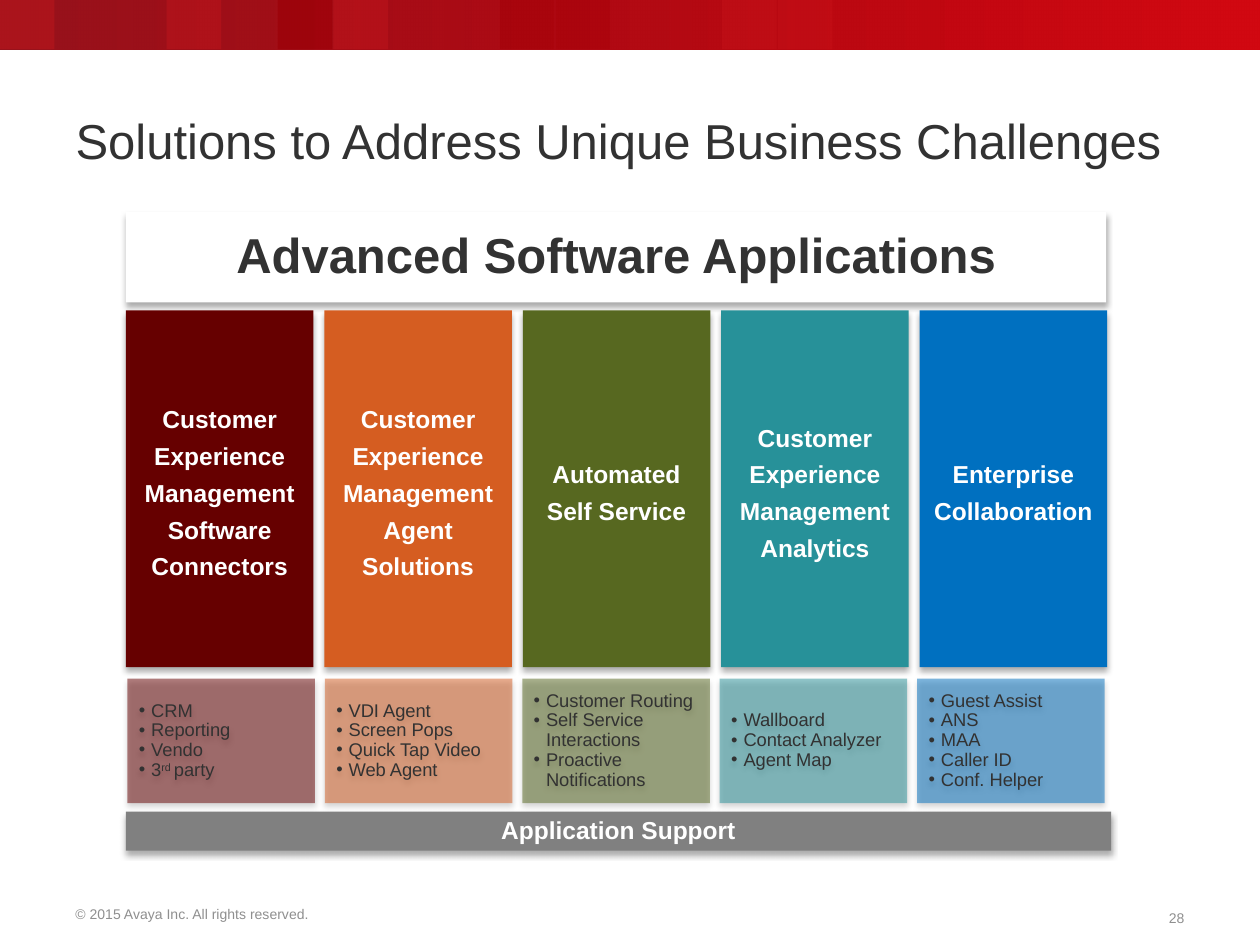
from lxml.etree import SubElement
from pptx import Presentation
from pptx.dml.color import RGBColor
from pptx.enum.shapes import MSO_SHAPE
from pptx.enum.text import MSO_ANCHOR, MSO_AUTO_SIZE, PP_ALIGN
from pptx.oxml.ns import qn
from pptx.util import Cm, Pt

FONT = "Arial"
WHITE = RGBColor(0xFF, 0xFF, 0xFF)
INK = RGBColor(0x32, 0x32, 0x32)
FOOTER_GRAY = RGBColor(0x8F, 0x8F, 0x8F)
SUPPORT_GRAY = RGBColor(0x80, 0x80, 0x80)
BANNER_START = RGBColor(0x91, 0x05, 0x0F)
BANNER_END = RGBColor(0xD1, 0x08, 0x11)
STRIP_DARK = RGBColor(0x99, 0x00, 0x00)
STRIP_LIGHT = RGBColor(0xFF, 0x47, 0x47)
MAROON = RGBColor(0x66, 0x00, 0x00)
ORANGE = RGBColor(0xD5, 0x5D, 0x21)
OLIVE = RGBColor(0x57, 0x68, 0x20)
TEAL = RGBColor(0x27, 0x91, 0x99)
BLUE = RGBColor(0x00, 0x70, 0xC0)

BANNER_HEIGHT = 0.99
STRIP_STEP = 1.12
STRIPS = {0: STRIP_LIGHT, 3: STRIP_LIGHT, 5: STRIP_DARK, 6: STRIP_LIGHT,
          9: STRIP_DARK, 10: STRIP_DARK, 13: STRIP_LIGHT, 14: STRIP_LIGHT}

LEFT = 2.54
CARD_WIDTH = 3.78
CARD_STEP = 4
LIST_LEFT = 2.57
LIST_STEP = 3.98

# (heading, colour, list right inset, list items); "^" encloses superscript
SOLUTIONS = [
    ("Customer Experience Management Software Connectors", MAROON, 0.25,
     ["CRM", "Reporting", "Vendo", "3^rd ^party"]),
    ("Customer Experience Management Agent Solutions", ORANGE, 0.25,
     ["VDI Agent", "Screen Pops", "Quick Tap Video", "Web Agent"]),
    ("Automated Self Service", OLIVE, 0,
     ["Customer Routing", "Self Service Interactions",
      "Proactive Notifications"]),
    ("Customer Experience Management Analytics", TEAL, 0.25,
     ["Wallboard", "Contact Analyzer", "Agent Map"]),
    ("Enterprise Collaboration", BLUE, 0.25,
     ["Guest Assist", "ANS", "MAA", "Caller ID", "Conf. Helper"]),
]


def format_paragraph(paragraph, size, color, bold=False,
                     align=PP_ALIGN.LEFT, spacing=0.9):
    paragraph.alignment = align
    paragraph.line_spacing = spacing
    font = paragraph.font
    font.name, font.size, font.bold = FONT, Pt(size), bold
    font.color.rgb = color


def set_opacity(shape, percent):
    for color in shape.fill._xPr.iter(qn("a:srgbClr")):
        SubElement(color, qn("a:alpha"), val=str(percent * 1000))


def add_block(slide, left, top, width, height, color=None):
    block = slide.shapes.add_shape(
        MSO_SHAPE.RECTANGLE, Cm(left), Cm(top), Cm(width), Cm(height))
    block.shadow.inherit = False
    block.line.fill.background()
    if color is not None:
        block.fill.solid()
        block.fill.fore_color.rgb = color
    return block


def add_shadow(block):
    effects = block._element.spPr.find(qn("a:effectLst"))
    shadow = SubElement(effects, qn("a:outerShdw"), blurRad=str(Pt(3.5)),
                        dist=str(Pt(2.2)), dir="5400000", rotWithShape="0")
    black = SubElement(shadow, qn("a:srgbClr"), val="000000")
    SubElement(black, qn("a:alpha"), val="32000")


def add_heading(slide, text, left, top, width, height, fill,
                size, color=WHITE, spacing=0.9):
    block = add_block(slide, left, top, width, height, fill)
    add_shadow(block)
    block.text_frame.word_wrap = True
    block.text_frame.vertical_anchor = MSO_ANCHOR.MIDDLE
    paragraph = block.text_frame.paragraphs[0]
    paragraph.add_run().text = text
    format_paragraph(paragraph, size, color, True, PP_ALIGN.CENTER, spacing)


def add_bullet(paragraph, item):
    properties = paragraph._p.get_or_add_pPr()
    properties.set("marL", str(Cm(0.48)))
    properties.set("indent", str(Cm(-0.25)))
    SubElement(properties, qn("a:buFont"), typeface=FONT)
    SubElement(properties, qn("a:buChar"), char="•")
    for position, part in enumerate(item.split("^")):
        run = paragraph.add_run()
        run.text = part
        if position % 2:
            run.font._element.set("baseline", "30000")
    format_paragraph(paragraph, 10.5, INK)


def add_bullet_list(slide, items, left, top, fill, right_inset):
    block = add_block(slide, left, top, CARD_WIDTH, 2.51, fill)
    set_opacity(block, 50)
    add_shadow(block)
    frame = block.text_frame
    frame.word_wrap = True
    frame.vertical_anchor = MSO_ANCHOR.MIDDLE
    frame.margin_left, frame.margin_right = Cm(0), Cm(right_inset)
    for index, item in enumerate(items):
        paragraph = frame.add_paragraph() if index else frame.paragraphs[0]
        add_bullet(paragraph, item)


def add_gradient_band(slide):
    band = add_block(slide, 0, 0, 25.4, BANNER_HEIGHT)
    band.fill.gradient()
    band.fill.gradient_angle = 0
    start, end = band.fill.gradient_stops
    start.color.rgb, end.color.rgb = BANNER_START, BANNER_END
    start.position, end.position = 0, 1
    SubElement(band.fill._xPr.find(".//" + qn("a:srgbClr")),
               qn("a:alpha"), val="76000")


def add_banner(slide):
    add_gradient_band(slide)
    for column, color in STRIPS.items():
        add_block(slide, column * STRIP_STEP, 0, 1.1, BANNER_HEIGHT, color)
    add_gradient_band(slide)


def add_title(slide, text):
    title = slide.shapes.title
    title.left, title.top = Cm(1.27), Cm(1.22)
    title.width, title.height = Cm(22.86), Cm(2.34)
    title.text_frame.text = text
    title.text_frame.auto_size = MSO_AUTO_SIZE.NONE
    title.text_frame.vertical_anchor = MSO_ANCHOR.BOTTOM
    format_paragraph(title.text_frame.paragraphs[0], 28, INK)


def add_footer(slide, text, left, top, width, align):
    footer = slide.shapes.add_textbox(
        Cm(left), Cm(top), Cm(width), Cm(0.56))
    footer.text_frame.text = text
    footer.text_frame.vertical_anchor = MSO_ANCHOR.MIDDLE
    format_paragraph(footer.text_frame.paragraphs[0], 8, FOOTER_GRAY,
                     align=align)


def main():
    deck = Presentation()
    deck.slide_width, deck.slide_height = Cm(25.4), Cm(19.05)
    slide = deck.slides.add_slide(deck.slide_layouts[5])

    # Banner, title and footer
    add_banner(slide)
    add_title(slide, "Solutions to Address Unique Business Challenges")
    add_footer(slide, "© 2015 Avaya Inc. All rights reserved.",
               1.27, 18.16, 5.31, PP_ALIGN.LEFT)
    add_footer(slide, "28", 23.27, 18.24, 0.86, PP_ALIGN.RIGHT)

    # Bars above and below the solutions
    add_heading(slide, "Advanced Software Applications",
                LEFT, 4.27, 19.76, 1.83, WHITE, 28, INK)
    add_heading(slide, "Application Support",
                LEFT, 16.36, 19.86, 0.79, SUPPORT_GRAY, 14)

    # Solution columns with their applications
    for index, (heading, color, right_inset, items) in enumerate(SOLUTIONS):
        add_heading(slide, heading, LEFT + index * CARD_STEP, 6.26,
                    CARD_WIDTH, 7.19, color, 14, spacing=1.25)
        add_bullet_list(slide, items, LIST_LEFT + index * LIST_STEP, 13.68,
                        color, right_inset)

    deck.save("out.pptx")


if __name__ == "__main__":
    main()
